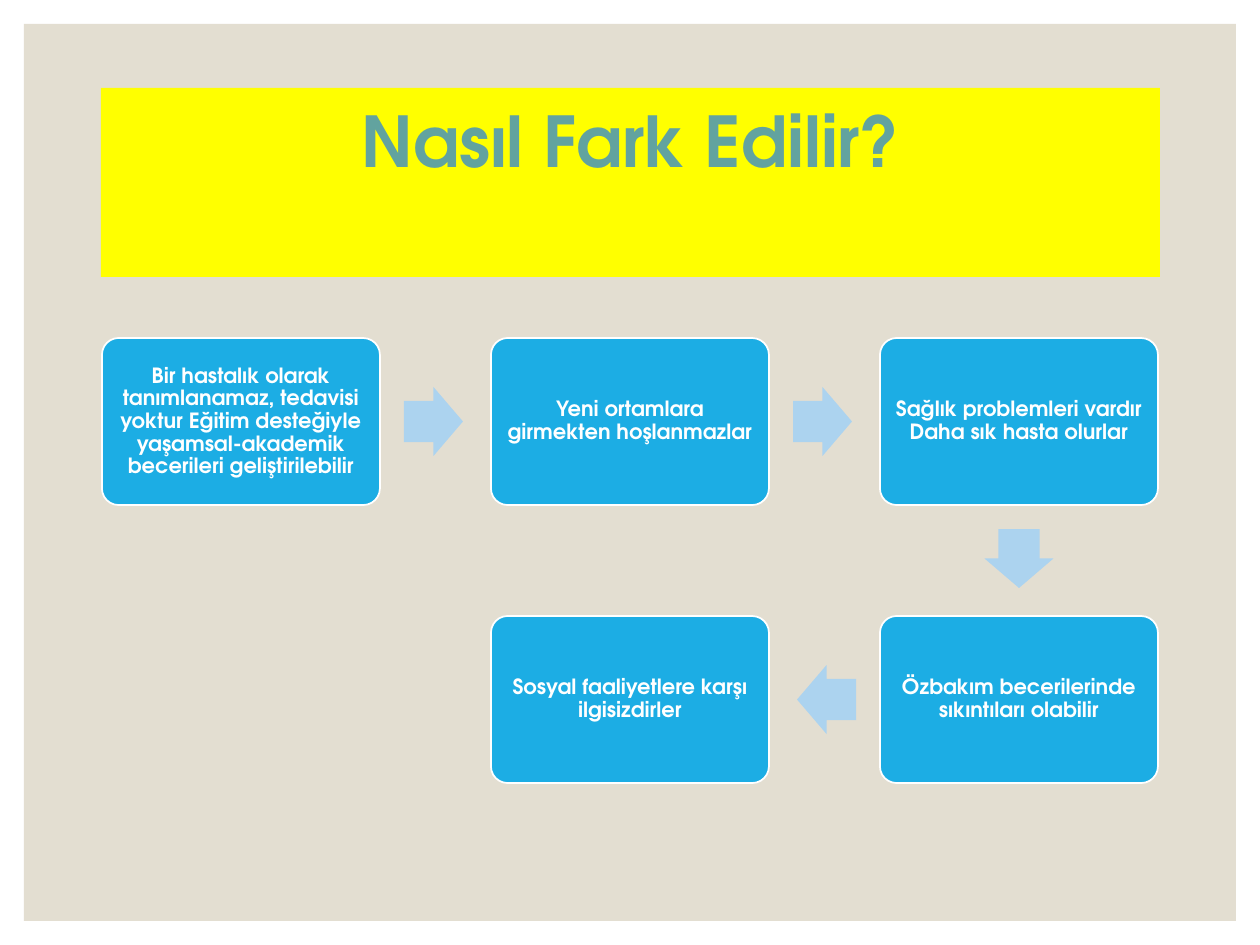
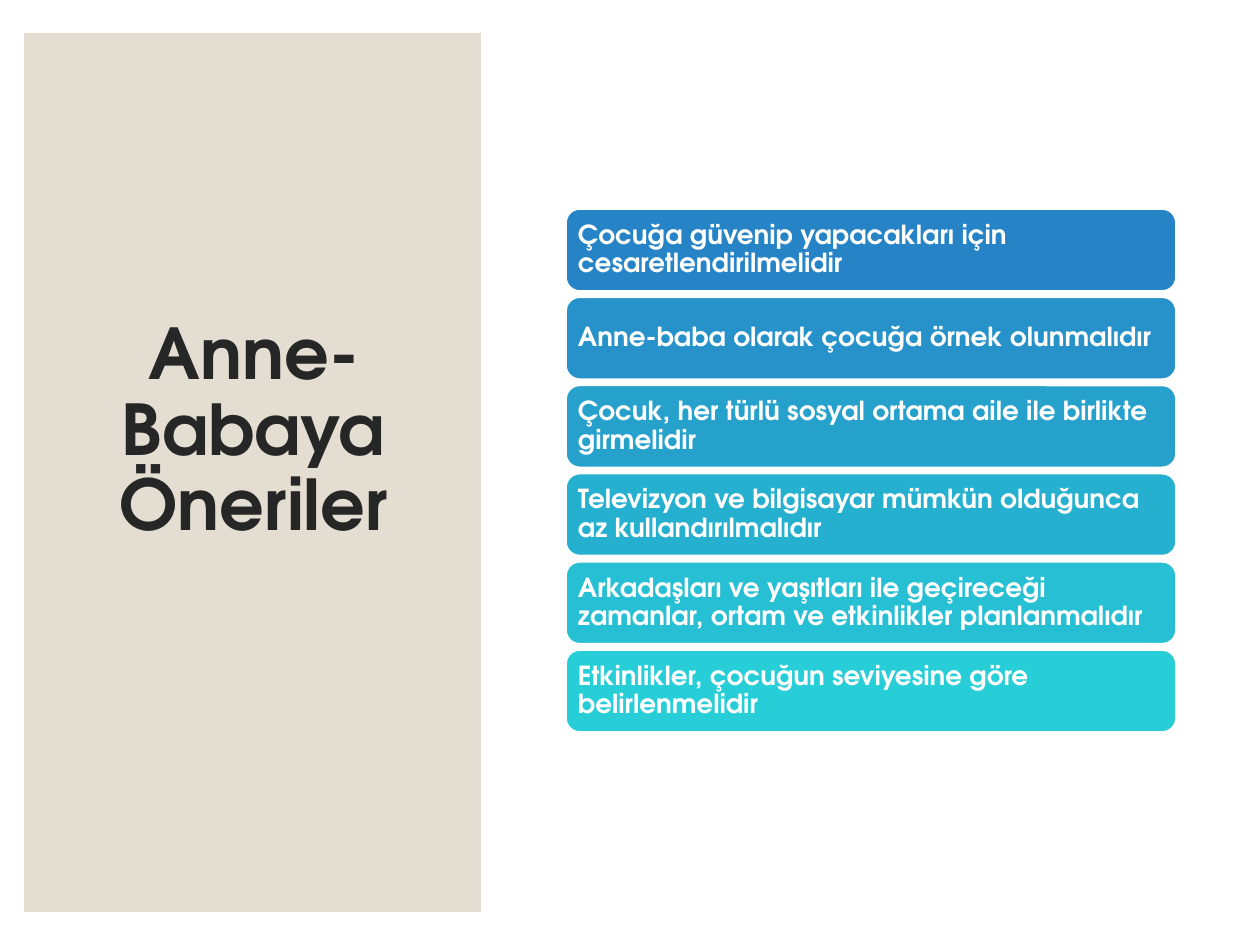
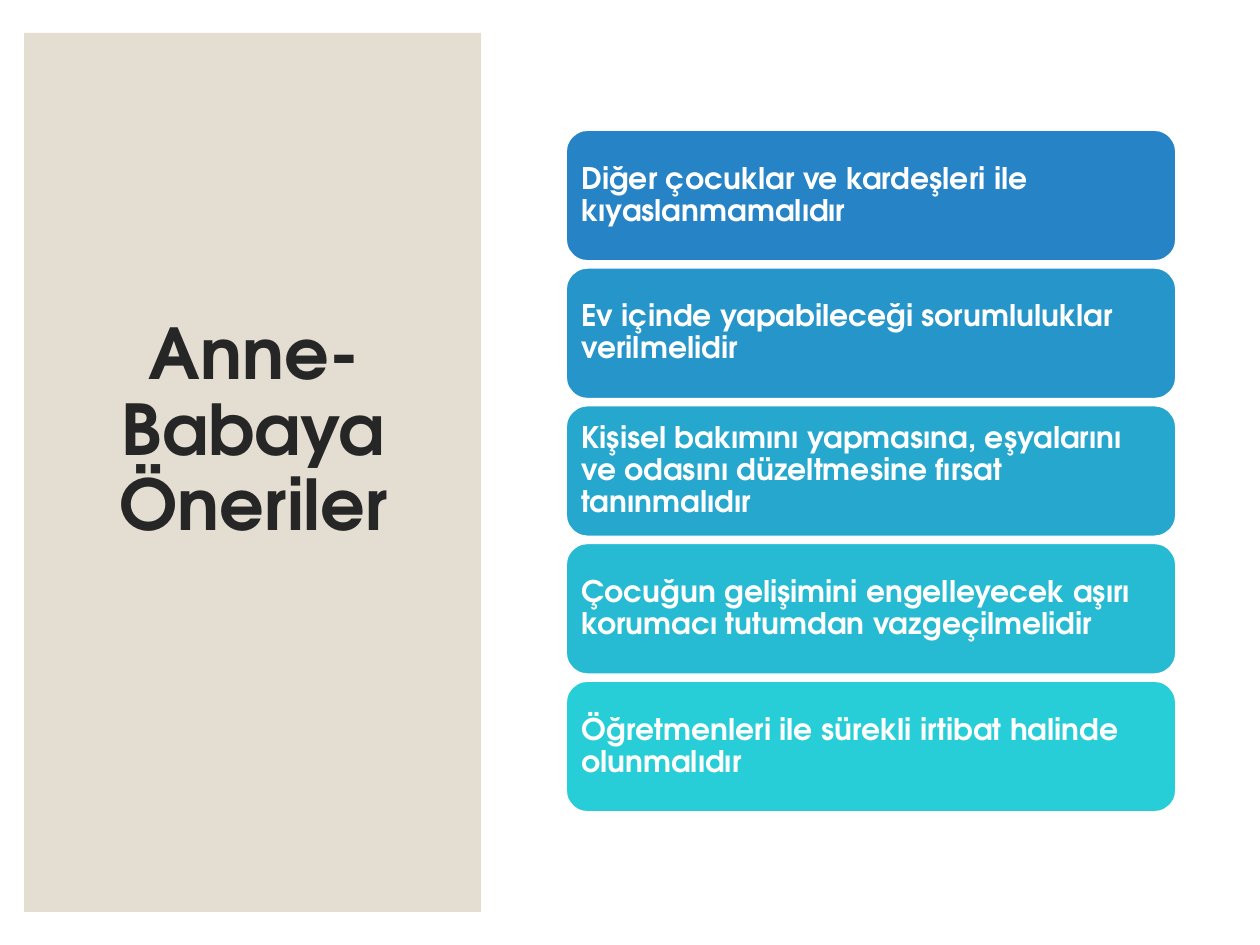
from pptx import Presentation
from pptx import util as u
from pptx.dml.color import RGBColor
from pptx.enum import shapes, text

PX = 914400 / 126
FONT = "TeX Gyre Adventor"
WHITE = RGBColor(0xFF, 0xFF, 0xFF)
SAND = RGBColor(0xE3, 0xDE, 0xD1)
YELLOW = RGBColor(0xFF, 0xFF, 0x00)
TEAL = RGBColor(0x62, 0xA3, 0x9F)
CHARCOAL = RGBColor(0x26, 0x26, 0x26)
STEP_BLUE = RGBColor(0x1C, 0xAD, 0xE4)
ARROW_BLUE = RGBColor(0xAC, 0xD3, 0xEF)
CARD_FIRST = RGBColor(0x26, 0x83, 0xC6)
CARD_LAST = RGBColor(0x27, 0xCE, 0xD7)

SIGNS_TITLE = "Nasıl Fark Edilir?"
SIGNS = [
    ((0, 0), "Bir hastalık olarak tanımlanamaz, tedavisi yoktur Eğitim desteğiyle "
             "yaşamsal-akademik becerileri geliştirilebilir"),
    ((1, 0), "Yeni ortamlara girmekten hoşlanmazlar"),
    ((2, 0), "Sağlık problemleri vardır Daha sık hasta olurlar"),
    ((2, 1), "Özbakım becerilerinde sıkıntıları olabilir"),
    ((1, 1), "Sosyal faaliyetlere karşı ilgisizdirler"),
]
ROTATION = {(1, 0): 0, (0, 1): 90, (-1, 0): 180}

ADVICE_TITLE = "Anne-Babaya Öneriler"
ADVICE = [
    {"first_top": 209, "last_top": 650, "height": 82, "size": 15, "inset": 8, "cards": [
        "Çocuğa güvenip yapacakları için cesaretlendirilmelidir",
        "Anne-baba olarak çocuğa örnek olunmalıdır",
        "Çocuk, her türlü sosyal ortama aile ile birlikte girmelidir",
        "Televizyon ve bilgisayar mümkün olduğunca az kullandırılmalıdır",
        "Arkadaşları ve yaşıtları ile geçireceği zamanlar, ortam ve etkinlikler planlanmalıdır",
        "Etkinlikler, çocuğun seviyesine göre belirlenmelidir",
    ]},
    {"first_top": 130, "last_top": 681, "height": 131, "size": 17, "inset": 9, "cards": [
        "Diğer çocuklar ve kardeşleri ile kıyaslanmamalıdır",
        "Ev içinde yapabileceği sorumluluklar verilmelidir",
        "Kişisel bakımını yapmasına, eşyalarını ve odasını düzeltmesine fırsat tanınmalıdır",
        "Çocuğun gelişimini engelleyecek aşırı korumacı tutumdan vazgeçilmelidir",
        "Öğretmenleri ile sürekli irtibat halinde olunmalıdır",
    ]},
]

STEP_LEFT, STEP_TOP, STEP_WIDTH, STEP_HEIGHT = 102, 338, 278, 167
COLUMN_PITCH, ROW_PITCH = 389, 278
ARROW_WIDTH, ARROW_HEIGHT, ARROW_SHIFT = 59, 69, 2
CARD_LEFT, CARD_WIDTH = 566, 610
TITLE_INSETS = (12, 6, 12, 81)


def px(value):
    return u.Emu(round(value * PX))


def add_box(slide, kind, box, fill, outline=None):
    shape = slide.shapes.add_shape(kind, *map(px, box))
    shape.shadow.inherit = False
    shape.fill.solid()
    shape.fill.fore_color.rgb = fill
    if outline is None:
        shape.line.fill.background()
    else:
        shape.line.color.rgb = outline
        shape.line.width = u.Pt(1)
    return shape


def write(shape, words, size, color, insets, alignment=text.PP_ALIGN.CENTER):
    frame = shape.text_frame
    frame.word_wrap = True
    frame.vertical_anchor = text.MSO_ANCHOR.MIDDLE
    frame.margin_left, frame.margin_top, frame.margin_right, frame.margin_bottom = map(px, insets)
    paragraph = frame.paragraphs[0]
    paragraph.alignment = alignment
    paragraph.line_spacing = 0.9
    run = paragraph.add_run()
    run.text = words
    run.font.name = FONT
    run.font.size = u.Pt(size)
    run.font.bold = True
    run.font.color.rgb = color


def blend(share):
    return RGBColor(*(int(a + (b - a) * share) for a, b in zip(CARD_FIRST, CARD_LAST)))


def step_center(cell):
    column, row = cell
    return (STEP_LEFT + column * COLUMN_PITCH + STEP_WIDTH / 2,
            STEP_TOP + row * ROW_PITCH + STEP_HEIGHT / 2)


def add_arrow(slide, start, end):
    direction = (end[0] - start[0], end[1] - start[1])
    x, y = ((a + b) / 2 - ARROW_SHIFT * d
            for a, b, d in zip(step_center(start), step_center(end), direction))
    arrow = add_box(slide, shapes.MSO_SHAPE.RIGHT_ARROW,
                    (x - ARROW_WIDTH / 2, y - ARROW_HEIGHT / 2, ARROW_WIDTH, ARROW_HEIGHT),
                    ARROW_BLUE)
    arrow.adjustments[0] = 0.6
    arrow.adjustments[1] = 0.5
    arrow.rotation = ROTATION[direction]


def build_signs(slide):
    add_box(slide, shapes.MSO_SHAPE.RECTANGLE, (24, 24, 1212, 897), SAND)
    title = add_box(slide, shapes.MSO_SHAPE.RECTANGLE, (101, 88, 1059, 189), YELLOW)
    write(title, SIGNS_TITLE, 40, TEAL, TITLE_INSETS)
    for cell, words in SIGNS:
        x, y = step_center(cell)
        step = add_box(slide, shapes.MSO_SHAPE.ROUNDED_RECTANGLE,
                       (x - STEP_WIDTH / 2, y - STEP_HEIGHT / 2, STEP_WIDTH, STEP_HEIGHT),
                       STEP_BLUE, WHITE)
        step.adjustments[0] = 0.1
        write(step, words, 12, WHITE, [6] * 4)
    for (start, _), (end, _) in zip(SIGNS, SIGNS[1:]):
        add_arrow(slide, start, end)


def build_advice(slide, stack):
    add_box(slide, shapes.MSO_SHAPE.RECTANGLE, (24, 33, 457, 879), SAND)
    title = slide.shapes.add_textbox(*map(px, (59, 77, 389, 786)))
    write(title, ADVICE_TITLE, 40, CHARCOAL, TITLE_INSETS)
    for index, words in enumerate(stack["cards"]):
        share = index / (len(stack["cards"]) - 1)
        top = stack["first_top"] + (stack["last_top"] - stack["first_top"]) * share
        card = add_box(slide, shapes.MSO_SHAPE.ROUNDED_RECTANGLE,
                       (CARD_LEFT, top, CARD_WIDTH, stack["height"]), blend(share), WHITE)
        write(card, words, stack["size"], WHITE, [stack["inset"]] * 4, text.PP_ALIGN.LEFT)


def main():
    presentation = Presentation()
    presentation.slide_width, presentation.slide_height = px(1260), px(945)
    blank = presentation.slide_layouts[6]
    build_signs(presentation.slides.add_slide(blank))
    for stack in ADVICE:
        build_advice(presentation.slides.add_slide(blank), stack)
    presentation.save("out.pptx")


if __name__ == "__main__":
    main()
